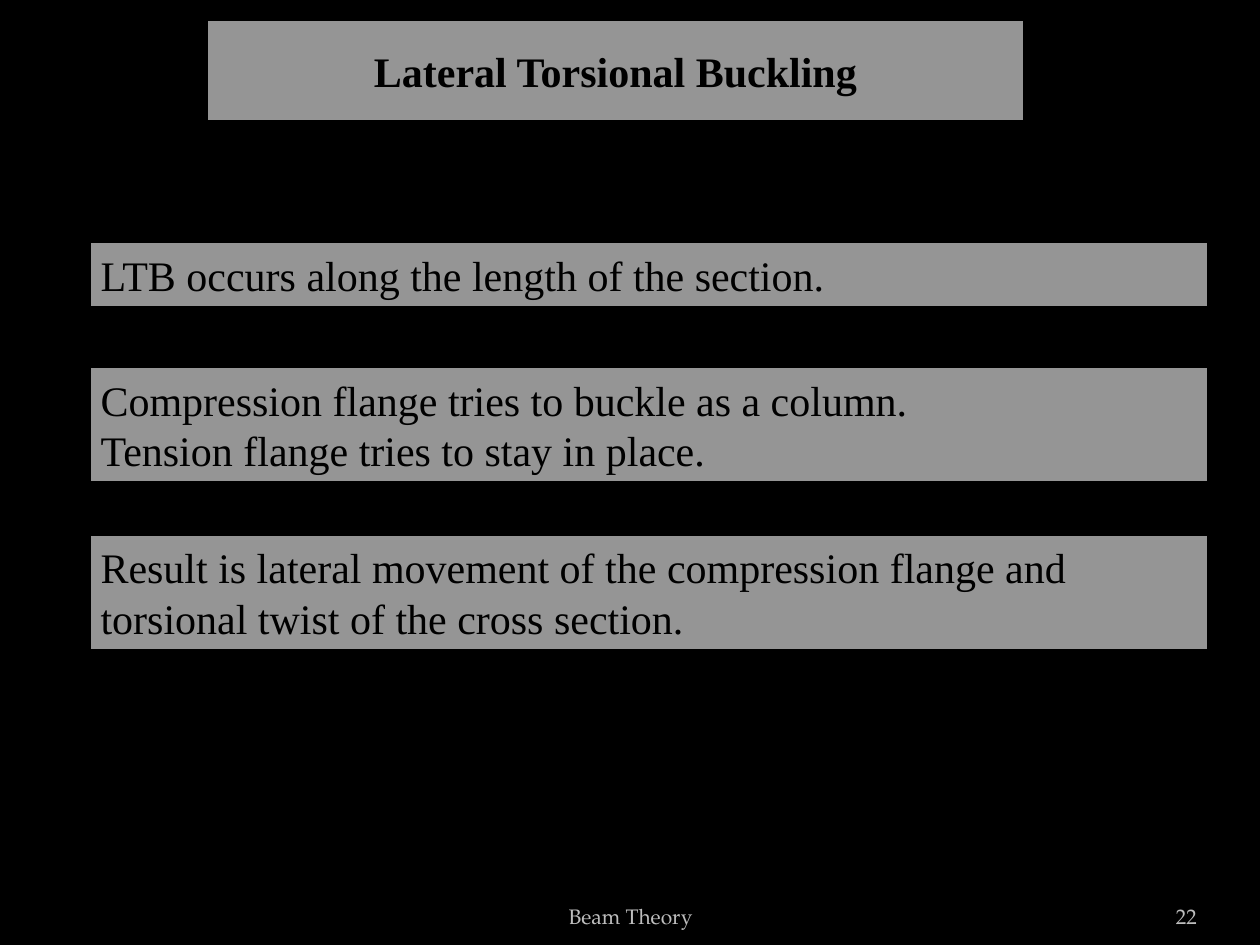
from lxml import etree
from pptx import Presentation
from pptx.dml.color import RGBColor
from pptx.enum import shapes, text
from pptx.oxml.ns import qn
from pptx.util import Inches, Pt

BLACK = RGBColor(0x00, 0x00, 0x00)
PALE = RGBColor(0xF2, 0xF2, 0xF2)
GRAY = RGBColor(0xBD, 0xBD, 0xBD)
LEFT, MID, RIGHT = text.PP_ALIGN.LEFT, text.PP_ALIGN.CENTER, text.PP_ALIGN.RIGHT


def write(shape, lines, size=24, font="Times New Roman", color=BLACK, bold=False,
          align=LEFT, anchor=text.MSO_ANCHOR.MIDDLE, fit=text.MSO_AUTO_SIZE.SHAPE_TO_FIT_TEXT):
    frame = shape.text_frame
    frame.text = "\n".join(lines)
    frame.word_wrap = True
    frame.auto_size = fit
    frame.vertical_anchor = anchor
    for para in frame.paragraphs:
        para.alignment = align
        para.font.size = Pt(size)
        para.font.name = font
        para.font.bold = bold
        para.font.color.rgb = color


def panel(shape):
    shape.fill.solid()
    shape.fill.fore_color.rgb = PALE
    tint = shape._element.spPr.find(".//" + qn("a:srgbClr"))
    etree.SubElement(tint, qn("a:alpha"), val="62000")
    shape.line.color.rgb = BLACK
    shape.line.width = Pt(3)
    shape.shadow.inherit = False


deck = Presentation()
deck.slide_width, deck.slide_height = Inches(10), Inches(7.5)
slide = deck.slides.add_slide(deck.slide_layouts[5])
slide.background.fill.solid()
slide.background.fill.fore_color.rgb = BLACK

title = slide.shapes.title
title.left, title.top = Inches(1.63), Inches(0.29)
title.width, title.height = Inches(6.51), Inches(0.54)
panel(title)
write(title, ["Lateral Torsional Buckling"], bold=True, align=MID)

points = [
    (1.91, 0.54, ["LTB occurs along the length of the section."]),
    (2.9, 0.94, ["Compression flange tries to buckle as a column.",
                 "Tension flange tries to stay in place."]),
    (4.23, 0.94, ["Result is lateral movement of the compression flange and "
                  "torsional twist of the cross section."]),
]
for top, high, lines in points:
    box = slide.shapes.add_shape(shapes.MSO_SHAPE.RECTANGLE, Inches(0.7), Inches(top),
                                 Inches(8.9), Inches(high))
    panel(box)
    write(box, lines)

for left, wide, inset, align, label in [(3.42, 3.17, 0.1, MID, "Beam Theory"),
                                        (8.67, 0.83, 0, RIGHT, "22")]:
    foot = slide.shapes.add_textbox(Inches(left), Inches(7.02), Inches(wide), Inches(0.4))
    foot.text_frame.margin_left = foot.text_frame.margin_right = Inches(inset)
    write(foot, [label], size=12, font="TeX Gyre Pagella", color=GRAY, align=align,
          anchor=text.MSO_ANCHOR.BOTTOM, fit=text.MSO_AUTO_SIZE.NONE)

deck.save("out.pptx")
